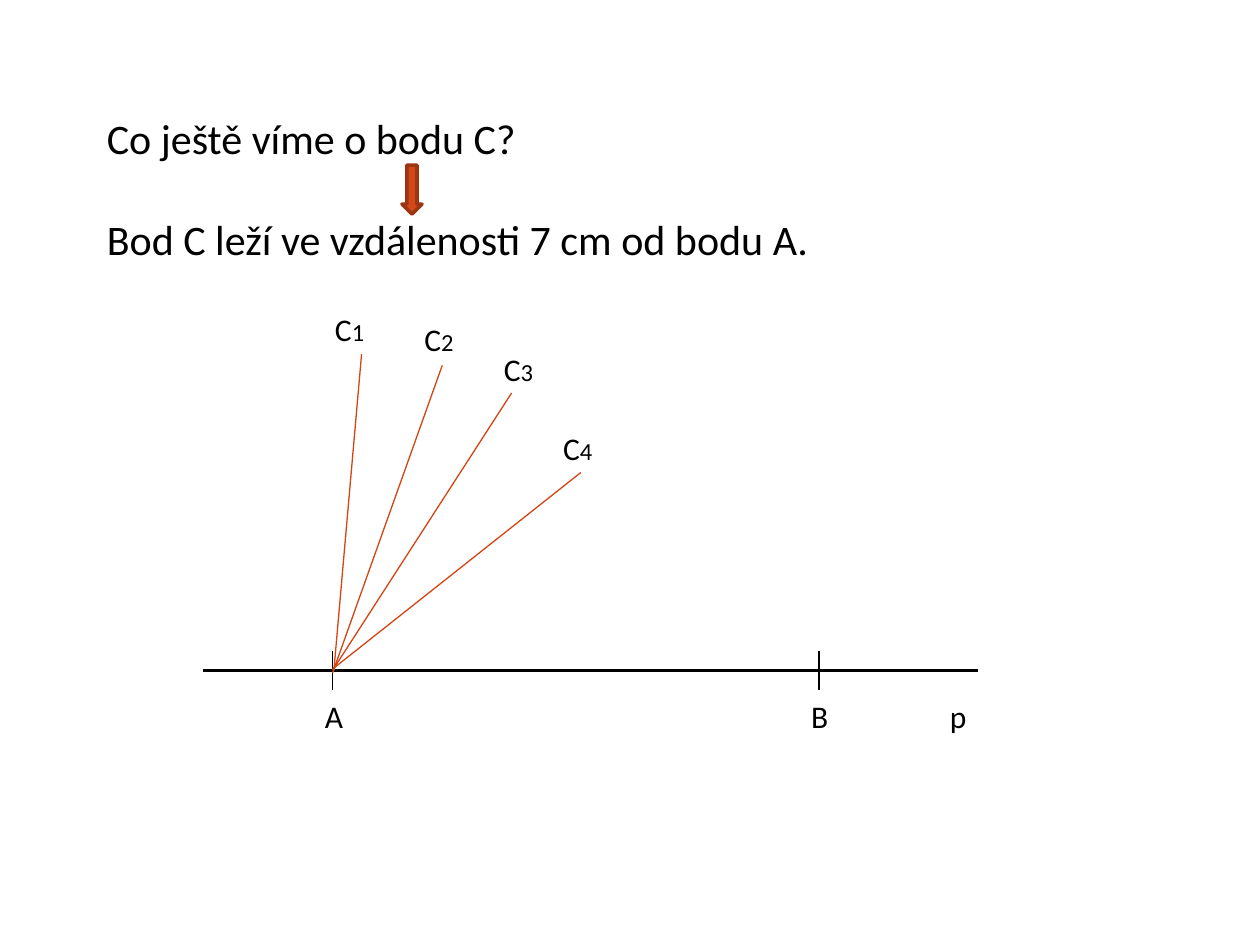
from lxml.etree import SubElement
from pptx import Presentation
from pptx.dml.color import RGBColor
from pptx.enum.shapes import MSO_CONNECTOR as CONNECTOR, MSO_SHAPE as SHAPE
from pptx.oxml.ns import qn
from pptx.util import Inches, Pt


def paint(color_format, hex_color):
    color_format.rgb = RGBColor.from_string(hex_color)


def add_text(left, top, width, height, paragraphs, gap=0):
    frame = slide.shapes.add_textbox(
        Inches(left), Inches(top), Inches(width), Inches(height)).text_frame
    frame.word_wrap = True
    for index, pieces in enumerate(paragraphs):
        paragraph = frame.paragraphs[0] if index == 0 else frame.add_paragraph()
        paragraph.space_before = Pt(gap if index else 0)
        for wording, size in pieces:
            run = paragraph.add_run()
            run.text = wording
            for key, value in {"name": "Calibri", "size": Pt(size)}.items():
                setattr(run.font, key, value)
            paint(run.font.color, BLACK)


BLACK, ORANGE, DARK_ORANGE = "000000", "D34412", "9C3511"

prs = Presentation()
prs.slide_width, prs.slide_height = Inches(10), Inches(7.5)
slide = prs.slides.add_slide(prs.slide_layouts[6])

axis_y, tick_top, tick_bottom = 5.32, 5.17, 5.48
a_x, b_x = 2.64, 6.5

segments = [
    (1.61, axis_y, 7.76, axis_y, BLACK, 1.5),
    (a_x, tick_top, a_x, tick_bottom, BLACK, 0.75),
    (b_x, tick_top, b_x, tick_bottom, BLACK, 0.75),
    (a_x, axis_y, 4.06, 3.12, ORANGE, 0.75),
    (a_x, 5.34, 3.51, 2.9, ORANGE, 0.75),
    (a_x, 5.31, 4.61, 3.75, ORANGE, 0.75),
    (2.65, axis_y, 2.87, 2.81, ORANGE, 0.75),
]
for x1, y1, x2, y2, color, weight in segments:
    segment = slide.shapes.add_connector(
        CONNECTOR.STRAIGHT, Inches(x1), Inches(y1), Inches(x2), Inches(y2))
    segment.line.width = Pt(weight)
    paint(segment.line.color, color)
    SubElement(segment._element.spPr, qn("a:effectLst"))

for label, left, width in [("A", 2.48, 0.71), ("B", 6.34, 0.47), ("p", 7.44, 0.39)]:
    add_text(left, tick_bottom, width, 0.4, [[(label, 18)]])

add_text(0.75, 0.84, 8.5, 1.31, [
    [("Co ještě víme o bodu C?", 24)],
    [("Bod C leží ve vzdálenosti 7 cm od bodu A.", 24)],
], gap=29.3)

arrow = slide.shapes.add_shape(
    SHAPE.DOWN_ARROW, Inches(3.19), Inches(1.31), Inches(0.16), Inches(0.39))
arrow.shadow.inherit = False
arrow.fill.solid()
paint(arrow.fill.fore_color, "D34817")
arrow.line.width = Pt(2)
paint(arrow.line.color, DARK_ORANGE)

c_labels = [(2.56, 2.41), (3.27, 2.49), (3.9, 2.73), (4.37, 3.36)]
for number, (left, top) in enumerate(c_labels, start=1):
    add_text(left, top, 0.55, 0.4, [[("C", 18), (str(number), 14)]])

prs.save("out.pptx")
